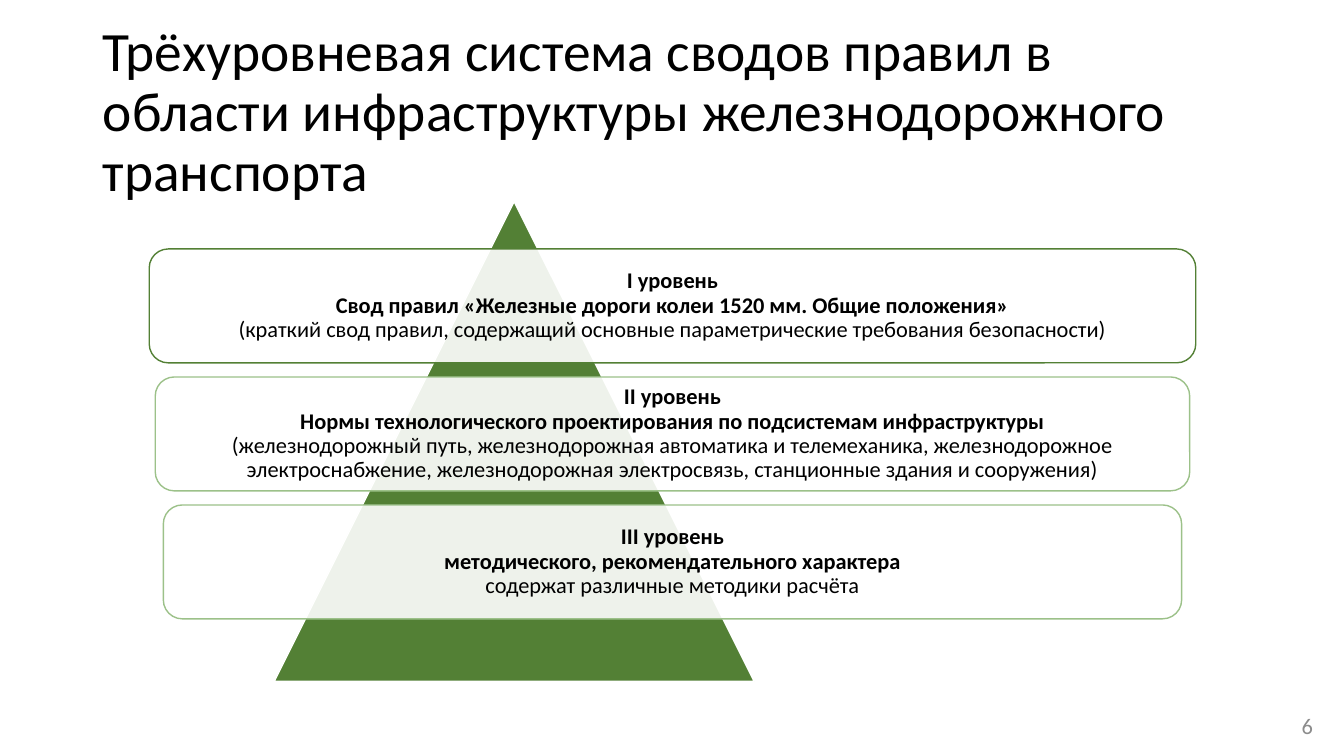
from dataclasses import dataclass

from pptx import Presentation
from pptx.dml.color import RGBColor
from pptx.enum.shapes import MSO_SHAPE as Preset
from pptx.enum.text import MSO_ANCHOR as Anchor, MSO_AUTO_SIZE as AutoSize, PP_ALIGN as Align
from pptx.oxml.ns import qn
from pptx.util import Inches, Pt
from lxml.etree import SubElement

BLACK = RGBColor(0x00, 0x00, 0x00)
WHITE = RGBColor(0xFF, 0xFF, 0xFF)
GREEN = RGBColor(0x53, 0x80, 0x35)
LIGHT_GREEN = RGBColor(0x9C, 0xC1, 0x89)
GREY = RGBColor(0x8C, 0x8C, 0x8C)
LEVELS_CENTRE = 6.67
LEVELS_TOP = 2.47
LEVEL_HEIGHT = 1.13
LEVEL_STEP = 1.27
LEVEL_OPACITY = 90


@dataclass(frozen=True)
class Level:
    name: str
    heading: str
    detail: str
    width: float
    outline: RGBColor


LEVELS = (
    Level("I уровень", "Свод правил «Железные дороги колеи 1520 мм. Общие положения»",
          "(краткий свод правил, содержащий основные параметрические требования безопасности)",
          10.38, GREEN),
    Level("II уровень", "Нормы технологического проектирования по подсистемам инфраструктуры",
          "(железнодорожный путь, железнодорожная автоматика и телемеханика, железнодорожное "
          "электроснабжение, железнодорожная электросвязь, станционные здания и сооружения)",
          10.26, LIGHT_GREEN),
    Level("III уровень", "методического, рекомендательного характера",
          "содержат различные методики расчёта", 10.1, LIGHT_GREEN),
)


def apply_format(target, values: dict) -> None:
    for name, value in values.items():
        setattr(target, name, value)


def place(box, left: float, top: float, width: float, height: float) -> None:
    apply_format(box, {"left": Inches(left), "top": Inches(top),
                       "width": Inches(width), "height": Inches(height)})


def add_span(para, text: str, size: float, colour: RGBColor, bold: bool = False) -> None:
    span = para.add_run()
    span.text = text
    apply_format(span.font, {"name": "Calibri", "size": Pt(size), "bold": bold})
    span.font.color.rgb = colour


def add_shape(page, preset, left: float, top: float, width: float, height: float,
              fill: RGBColor, outline: RGBColor):
    shape = page.shapes.add_shape(preset, Inches(left), Inches(top), Inches(width), Inches(height))
    shape.shadow.inherit = False
    shape.fill.solid()
    shape.fill.fore_color.rgb = fill
    shape.line.color.rgb = outline
    shape.line.width = Pt(1)
    return shape


def add_title(page, text: str) -> None:
    title = page.shapes.title
    place(title, 0.92, 0.4, 11.5, 1.45)
    apply_format(title.text_frame, {"word_wrap": True, "auto_size": AutoSize.NONE,
                                    "vertical_anchor": Anchor.MIDDLE})
    para = title.text_frame.paragraphs[0]
    apply_format(para, {"alignment": Align.LEFT, "line_spacing": 0.9})
    add_span(para, text, 39.6, BLACK)


def add_level(page, level: Level, index: int) -> None:
    box = add_shape(page, Preset.ROUNDED_RECTANGLE, LEVELS_CENTRE - level.width / 2,
                    LEVELS_TOP + index * LEVEL_STEP, level.width, LEVEL_HEIGHT,
                    WHITE, level.outline)
    colour = box.fill._xPr.find(qn("a:solidFill"))[0]
    SubElement(colour, qn("a:alpha"), val=str(LEVEL_OPACITY * 1000))
    inset = Inches(0.07)
    apply_format(box.text_frame, {"word_wrap": True, "vertical_anchor": Anchor.MIDDLE,
                                  "margin_left": inset, "margin_right": inset,
                                  "margin_top": inset, "margin_bottom": inset})
    para = box.text_frame.paragraphs[0]
    apply_format(para, {"alignment": Align.CENTER, "line_spacing": 0.9})
    for text in (level.name, level.heading):
        add_span(para, text, 16, BLACK, bold=True)
        para.add_line_break()
    add_span(para, level.detail, 16, BLACK)


def add_page_number(page, number: str) -> None:
    box = page.shapes.add_textbox(Inches(10.12), Inches(7), Inches(3), Inches(0.4))
    apply_format(box.text_frame, {"word_wrap": True, "vertical_anchor": Anchor.MIDDLE})
    para = box.text_frame.paragraphs[0]
    para.alignment = Align.RIGHT
    add_span(para, number, 16, GREY)


def main() -> None:
    deck = Presentation()
    apply_format(deck, {"slide_width": Inches(13.33), "slide_height": Inches(7.5)})
    page = deck.slides.add_slide(deck.slide_layouts.get_by_name("Title Only"))
    add_title(page, "Трёхуровневая система сводов правил в области "
                    "инфраструктуры железнодорожного транспорта")
    add_shape(page, Preset.ISOSCELES_TRIANGLE, 2.72, 2, 4.76, 4.76, GREEN, WHITE)
    for index, level in enumerate(LEVELS):
        add_level(page, level, index)
    add_page_number(page, "6")
    deck.save("out.pptx")


if __name__ == "__main__":
    main()
